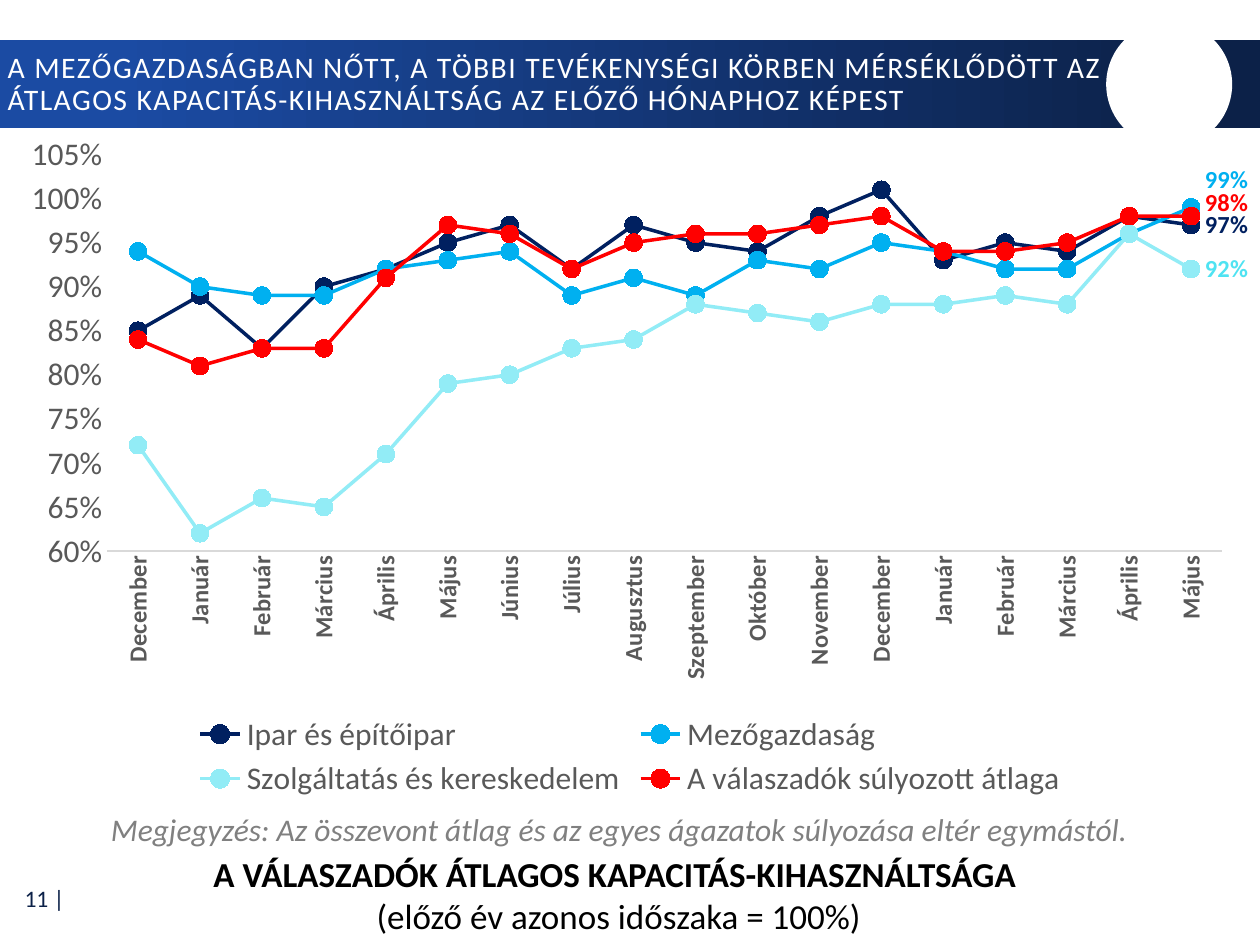
"""Builds the slide on average capacity utilisation by sector."""
import pptx
import pptx.chart.data
import pptx.dml.color
import pptx.enum.chart
import pptx.enum.shapes
import pptx.enum.text
import pptx.oxml
import pptx.oxml.ns
import pptx.util
from pptx.util import Cm, Pt

COLORS = {
    "white": "FFFFFF", "black": "000000", "blue": "1B4BA3", "navy": "0C2148",
    "note": "808080", "axis": "595959", "rule": "D9D9D9", "industry": "002060",
    "farming": "00B0F0", "services": "92ECF6", "services_label": "4FE3F2",
    "average": "FF0000",
}
MONTHS = ["Január", "Február", "Március", "Április", "Május", "Június", "Július",
          "Augusztus", "Szeptember", "Október", "November", "December"]
CATEGORIES = MONTHS[-1:] + MONTHS + MONTHS[:5]
SERIES = [
    ("Ipar és építőipar", "industry", "industry", None,
     [85, 89, 83, 90, 92, 95, 97, 92, 97, 95, 94, 98, 101, 93, 95, 94, 98, 97]),
    ("Mezőgazdaság", "farming", "farming", (0, -0.04),
     [94, 90, 89, 89, 92, 93, 94, 89, 91, 89, 93, 92, 95, 94, 92, 92, 96, 99]),
    ("Szolgáltatás és kereskedelem", "services", "services_label", None,
     [72, 62, 66, 65, 71, 79, 80, 83, 84, 88, 87, 86, 88, 88, 89, 88, 96, 92]),
    ("A válaszadók súlyozott átlaga", "average", "average", (0, -0.02),
     [84, 81, 83, 83, 91, 97, 96, 92, 95, 96, 96, 97, 98, 94, 94, 95, 98, 98]),
]


def rgb(name):
    return pptx.dml.color.RGBColor.from_string(COLORS[name])


def manual_layout(**values):
    """Return a c:layout element holding the given settings."""
    items = "".join(f'<c:{k} val="{v}"/>' for k, v in values.items())
    return pptx.oxml.parse_xml(
        f'<c:layout {pptx.oxml.ns.nsdecls("c")}><c:manualLayout>{items}'
        "</c:manualLayout></c:layout>")


class SlideBuilder:
    """Holds the style and the current slide."""

    def __init__(self, prs, font="Calibri"):
        self.font = font
        self.s = prs.slides.add_slide(prs.slide_layouts[5])

    def style(self, font, size, color, bold=False, italic=False):
        font.name, font.size, font.bold, font.italic = self.font, Pt(size), bold, italic
        font.color.rgb = rgb(color)

    def shape(self, kind, box, color, end_color=None):
        sp = self.s.shapes.add_shape(kind, *map(Cm, box))
        sp.shadow.inherit = False
        sp.line.fill.background()
        if end_color:
            sp.fill.gradient()
            sp.fill.gradient_angle = 0
            stops = zip(sp.fill.gradient_stops, (color, end_color), (0.09, 0.95))
            for stop, name, position in stops:
                stop.color.rgb, stop.position = rgb(name), position
        else:
            sp.fill.solid()
            sp.fill.fore_color.rgb = rgb(color)

    def title(self, text, box):
        sp = self.s.shapes.title
        sp.left, sp.top, sp.width, sp.height = map(Cm, box)
        sp.element.getparent().append(sp.element)
        tf = sp.text_frame
        tf.text = text
        tf.word_wrap = True
        tf.auto_size = pptx.enum.text.MSO_AUTO_SIZE.NONE
        tf.vertical_anchor = pptx.enum.text.MSO_ANCHOR.MIDDLE
        p = tf.paragraphs[0]
        p.alignment = pptx.enum.text.PP_ALIGN.LEFT
        p.line_spacing = 0.9
        r = p.runs[0]
        self.style(r.font, 17, "white")
        r.font.element.set("spc", "80") if hasattr(r.font, "element") else \
            r.text and p.runs[0]._r.get_or_add_rPr().set("spc", "80")

    def text(self, lines, box, size, color, align="CENTER", bold_first=False,
             italic=False, anchor="TOP"):
        tf = self.s.shapes.add_textbox(*map(Cm, box)).text_frame
        tf.word_wrap = True
        tf.vertical_anchor = pptx.enum.text.MSO_ANCHOR[anchor]
        tf.text = "\n".join(lines)
        for i, p in enumerate(tf.paragraphs):
            p.alignment = pptx.enum.text.PP_ALIGN[align]
            self.style(p.runs[0].font, size, color, bold_first and i == 0, italic)

    def line_chart(self, box):
        data = pptx.chart.data.CategoryChartData(number_format="0%")
        data.categories = CATEGORIES
        for name, _, _, _, percents in SERIES:
            data.add_series(name, [v / 100 for v in percents])
        chart = self.s.shapes.add_chart(
            pptx.enum.chart.XL_CHART_TYPE.LINE_MARKERS, *map(Cm, box), data).chart
        self.style(chart.font, 18, "black")
        chart.has_title = False
        chart.has_legend = True
        chart.legend.position = pptx.enum.chart.XL_LEGEND_POSITION.BOTTOM
        chart.legend.include_in_layout = False
        self.style(chart.legend.font, 18, "axis")
        self.axes(chart)
        chart.plots[0].vary_by_categories = False
        for series, (_, color, label_color, shift, _) in zip(chart.plots[0].series, SERIES):
            self.series(chart, series, color, label_color, shift)
        area = chart.element.xpath(".//c:plotArea")[0]
        for old in area.xpath("./c:layout"):
            area.remove(old)
        area.insert(0, manual_layout(layoutTarget="inner", xMode="edge", yMode="edge",
                                     x=0.085, y=0.04, w=0.885, h=0.586))

    def axes(self, chart):
        none = pptx.enum.chart.XL_TICK_MARK.NONE
        cat, val = chart.category_axis, chart.value_axis
        for axis, size, bold in ((cat, 14, True), (val, 18, False)):
            axis.major_tick_mark = axis.minor_tick_mark = none
            axis.has_major_gridlines = False
            self.style(axis.tick_labels.font, size, "axis", bold)
        cat.format.line.color.rgb = rgb("rule")
        cat.format.line.width = Pt(0.75)
        chart.element.xpath(".//c:catAx/c:txPr/a:bodyPr")[0].set("rot", "-5400000")
        val.format.line.fill.background()
        val.minimum_scale, val.maximum_scale, val.major_unit = 0.6, 1.05, 0.05
        val.tick_labels.number_format = "0%"
        val.tick_labels.number_format_is_linked = False

    def series(self, chart, series, color, label_color, shift):
        series.smooth = False
        series.format.line.color.rgb = rgb(color)
        series.format.line.width = Pt(2)
        marker = series.marker
        marker.style = pptx.enum.chart.XL_MARKER_STYLE.CIRCLE
        marker.size = 10
        marker.format.fill.solid()
        marker.format.fill.fore_color.rgb = rgb(color)
        marker.format.line.color.rgb = rgb(color)
        label = series.points[len(CATEGORIES) - 1].data_label
        self.style(label.font, 14, label_color, bold=True)
        label.position = pptx.enum.chart.XL_LABEL_POSITION.RIGHT
        if shift:
            chart.element.xpath(".//c:dLbl")[-1].insert(
                1, manual_layout(x=shift[0], y=shift[1]))


def main():
    prs = pptx.Presentation()
    prs.slide_width, prs.slide_height = Cm(25.4), Cm(19.05)
    b = SlideBuilder(prs)
    shapes = pptx.enum.shapes.MSO_SHAPE
    b.text(["11 |"], (0.03, 17.63, 1.52, 0.94), 13.5, "navy", "RIGHT", anchor="MIDDLE")
    b.shape(shapes.RECTANGLE, (0, 0.81, 25.4, 1.78), "blue", "navy")
    b.shape(shapes.OVAL, (22.3, 0.43, 2.54, 2.54), "white")
    b.title("A MEZŐGAZDASÁGBAN NŐTT, A TÖBBI TEVÉKENYSÉGI KÖRBEN MÉRSÉKLŐDÖTT AZ "
            "ÁTLAGOS KAPACITÁS-KIHASZNÁLTSÁG AZ ELŐZŐ HÓNAPHOZ KÉPEST",
            (-0.1, 0.86, 23.22, 1.7))
    b.text(["A VÁLASZADÓK ÁTLAGOS KAPACITÁS-KIHASZNÁLTSÁGA ",
            "(előző év azonos időszaka = 100%)"],
           (2.24, 17.07, 20.47, 1.96), 20, "black", bold_first=True)
    b.text(["Megjegyzés: Az összevont átlag és az egyes ágazatok súlyozása eltér egymástól."],
           (0.89, 16.21, 23.19, 1.02), 18, "note", italic=True)
    b.line_chart((0, 2.57, 25.4, 13.64))
    prs.save("out.pptx")


if __name__ == "__main__":
    main()
